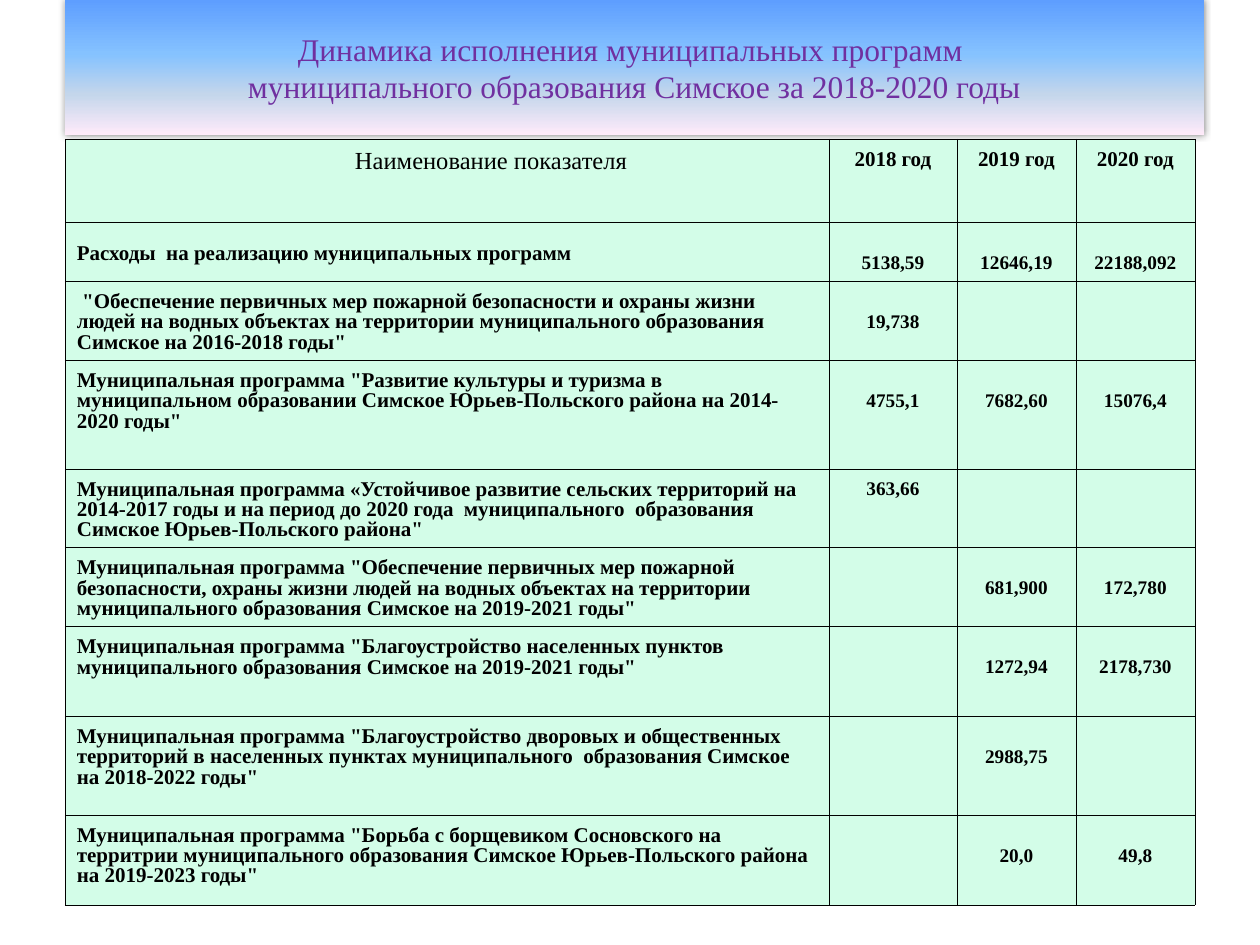
import pptx
import pptx.dml.color
import pptx.enum.text
import pptx.oxml
import pptx.oxml.ns
import pptx.util

COLOURS = {
    "title": "7030A0",
    "text": "000000",
    "cell": "D3FDE8",
    "border": "000000",
    "shadow": "000000",
}
GRADIENT = [(0, "5E9EFF"), (40, "85C2FF"), (70, "C4D6EB"), (100, "FFEBFA")]
ALIGN = pptx.enum.text.PP_ALIGN
ANCHOR = pptx.enum.text.MSO_ANCHOR
COLUMN_WIDTHS = [764, 128, 119, 119]
ROW_HEIGHTS = [83, 59, 79, 109, 78, 79, 90, 99, 90]
HEADER = ["Наименование показателя", "2018 год", "2019 год", "2020 год"]
SINGLE, LOWERED = 12, 33
PROGRAMS = [
    (LOWERED, "Расходы  на реализацию муниципальных программ",
     "5138,59", "12646,19", "22188,092"),
    (LOWERED, ' "Обеспечение первичных мер пожарной безопасности и охраны жизни людей '
     'на водных объектах на территории муниципального образования Симское на 2016-2018 годы"',
     "19,738", "", ""),
    (LOWERED, 'Муниципальная программа "Развитие культуры и туризма в муниципальном '
     'образовании Симское Юрьев-Польского района на 2014-2020 годы"',
     "4755,1", "7682,60", "15076,4"),
    (SINGLE, "Муниципальная программа «Устойчивое развитие сельских территорий на 2014-2017 годы "
     'и на период до 2020 года  муниципального  образования Симское Юрьев-Польского района"',
     "363,66", "", ""),
    (LOWERED, 'Муниципальная программа "Обеспечение первичных мер пожарной безопасности, охраны жизни '
     'людей на водных объектах на территории муниципального образования Симское на 2019-2021 годы"',
     "", "681,900", "172,780"),
    (LOWERED, 'Муниципальная программа "Благоустройство населенных пунктов '
     'муниципального образования Симское на 2019-2021 годы"',
     "", "1272,94", "2178,730"),
    (LOWERED, 'Муниципальная программа "Благоустройство дворовых и общественных территорий '
     'в населенных пунктах муниципального  образования Симское на 2018-2022 годы"',
     "", "2988,75", ""),
    (LOWERED, 'Муниципальная программа "Борьба с борщевиком Сосновского на территрии '
     'муниципального образования Симское Юрьев-Польского района на 2019-2023 годы"',
     "", "20,0", "49,8"),
]


def px(length):
    return round(length * 914400 / 126)


def rgb(name):
    return pptx.dml.color.RGBColor.from_string(COLOURS[name])


def apply(target, values):
    for name, value in values.items():
        setattr(target, name, value)


def xml(tag, content):
    return pptx.oxml.parse_xml(f"<a:{tag} {pptx.oxml.ns.nsdecls('a')}>{content}</a:{tag.split()[0]}>")


class SlideBuilder:
    font = "Times New Roman"
    line_spacing = 0.86

    def __init__(self, deck):
        self.page = deck.slides.add_slide(deck.slide_layouts[5])

    def span(self, para, text, size, colour, bold):
        span = para.add_run()
        span.text = text
        apply(span.font, {"name": self.font, "size": pptx.util.Pt(size), "bold": bold})
        span.font.color.rgb = rgb(colour)

    def title(self, lines, left, top, width, height):
        box = self.page.shapes.title
        apply(box, {"left": px(left), "top": px(top), "width": px(width), "height": px(height)})
        frame = box.text_frame
        apply(frame, {"word_wrap": True, "vertical_anchor": ANCHOR.MIDDLE,
                      "auto_size": pptx.enum.text.MSO_AUTO_SIZE.NONE})
        for index, line in enumerate(lines):
            para = frame.add_paragraph() if index else frame.paragraphs[0]
            para.alignment = ALIGN.CENTER
            self.span(para, line, 18, "title", False)
        stops = "".join(f'<a:gs pos="{place * 1000}"><a:srgbClr val="{colour}"/></a:gs>'
                        for place, colour in GRADIENT)
        properties = box.element.spPr
        properties.append(xml("gradFill", f'<a:gsLst>{stops}</a:gsLst><a:lin ang="5400000" scaled="0"/>'))
        properties.append(xml("effectLst", '<a:outerShdw blurRad="50800" dist="0" dir="5400000">'
                              f'<a:srgbClr val="{COLOURS["shadow"]}"><a:alpha val="43000"/></a:srgbClr>'
                              "</a:outerShdw>"))

    def table(self, left, top, widths, heights):
        frame = self.page.shapes.add_table(len(heights), len(widths), px(left), px(top),
                                           px(sum(widths)), px(sum(heights)))
        table = frame.table
        apply(table, {"first_row": False, "horz_banding": False})
        for column, width in zip(table.columns, widths):
            column.width = px(width)
        for row, height in zip(table.rows, heights):
            row.height = px(height)
        return table

    def cell(self, cell, text, size=12, bold=True, top=SINGLE, left=12,
             align=ALIGN.CENTER, anchor=ANCHOR.TOP):
        apply(cell, {"margin_left": px(left), "margin_right": px(12), "margin_top": px(top),
                     "margin_bottom": px(6), "vertical_anchor": anchor})
        properties = cell._tc.get_or_add_tcPr()
        line = f'<a:solidFill><a:srgbClr val="{COLOURS["border"]}"/></a:solidFill>'
        for side in ("lnL", "lnR", "lnT", "lnB"):
            properties.append(xml(f'{side} w="1397"', line))
        cell.fill.solid()
        cell.fill.fore_color.rgb = rgb("cell")
        if text:
            para = cell.text_frame.paragraphs[0]
            apply(para, {"alignment": align, "line_spacing": self.line_spacing})
            self.span(para, text, size, "text", bold)


def main():
    deck = pptx.Presentation()
    apply(deck, {"slide_width": px(1260), "slide_height": px(945)})
    builder = SlideBuilder(deck)
    builder.title(["Динамика исполнения муниципальных программ ",
                   "муниципального образования Симское за 2018-2020 годы"], 65, 0, 1139, 135)
    table = builder.table(65, 139, COLUMN_WIDTHS, ROW_HEIGHTS)
    builder.cell(table.cell(0, 0), HEADER[0], size=14, bold=False, left=290, align=ALIGN.LEFT)
    for column, year in enumerate(HEADER[1:], 1):
        builder.cell(table.cell(0, column), year)
    for row, (top, name, *values) in enumerate(PROGRAMS, 1):
        anchor = ANCHOR.MIDDLE if row == 1 else ANCHOR.TOP
        builder.cell(table.cell(row, 0), name, align=ALIGN.LEFT, anchor=anchor)
        for column, value in enumerate(values, 1):
            builder.cell(table.cell(row, column), value, size=11, top=top if value else SINGLE)
    deck.save("out.pptx")


if __name__ == "__main__":
    main()
